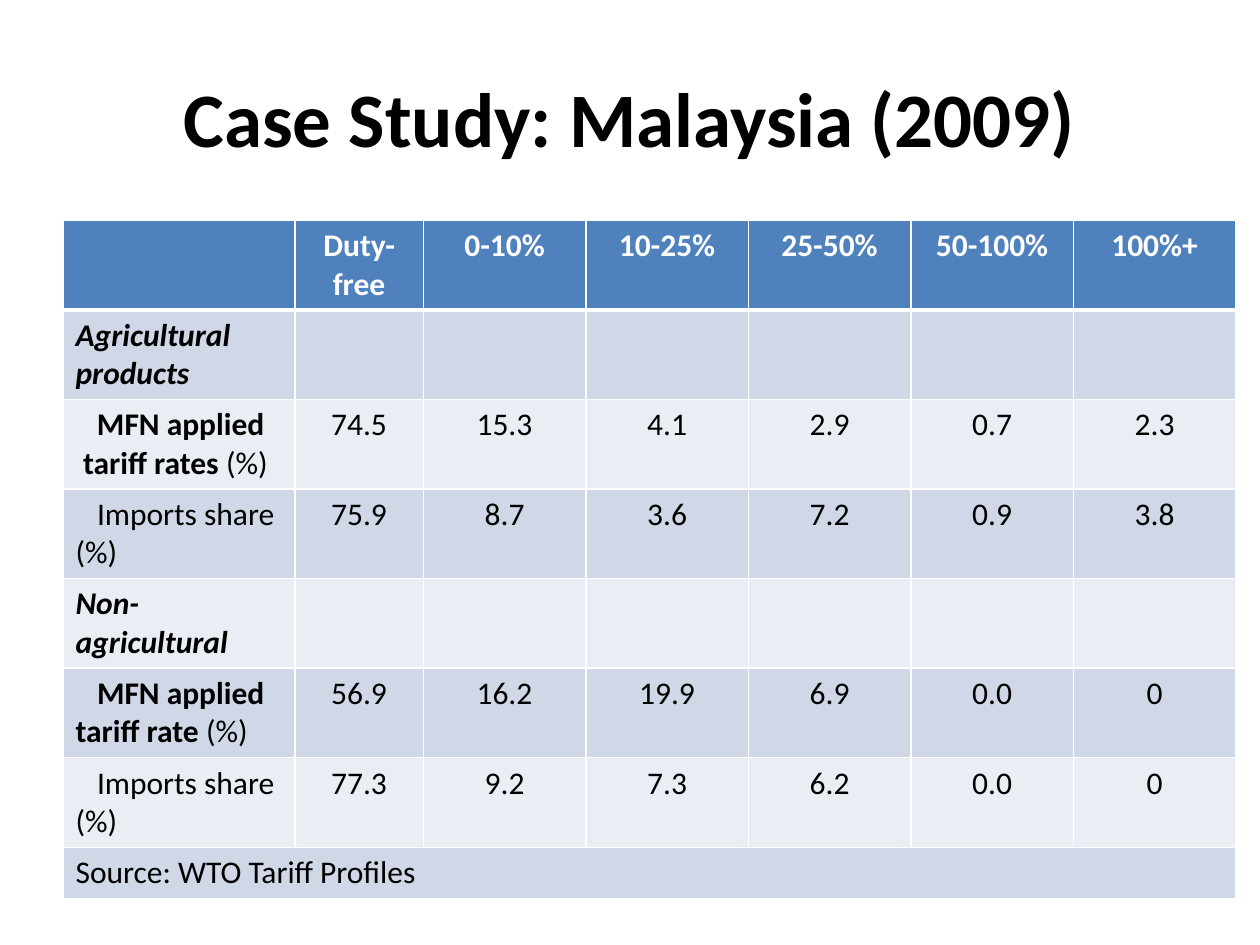
from dataclasses import dataclass

from lxml import etree
from pptx import Presentation, util as u
from pptx.dml.color import RGBColor
from pptx.enum import text
from pptx.oxml.ns import qn

COLORS = {
    "header": "4F81BD",
    "odd": "D0D8E8",
    "even": "E9EDF4",
    "line": "FFFFFF",
    "light": "FFFFFF",
    "dark": "000000",
}
FONT = "Calibri"
UNIT = 0.25  # grid step in inches: 40 columns by 30 rows
FIRST_WIDTH, DUTY_FREE_WIDTH, BAND_WIDTH = 7.36, 4.08, 5.16
ROW_HEIGHT, SOURCE_HEIGHT = 2.8, 1.64
INDENT = 0.68
THIN, THICK = 1, 3


@dataclass
class TariffRow:
    strong: str = ""
    plain: str = ""
    values: tuple[str, ...] = ()
    italic: bool = False
    indent: float = 0  # start of the first line
    margin: float = 0  # start of the following lines


HEADINGS = ("", "Duty-free", "0-10%", "10-25%", "25-50%", "50-100%", "100%+")
ROWS = [
    TariffRow("Agricultural products", italic=True),
    TariffRow("MFN applied tariff rates ", "(%)",
              ("74.5", "15.3", "4.1", "2.9", "0.7", "2.3"), indent=INDENT, margin=0.24),
    TariffRow("", "Imports share (%)",
              ("75.9", "8.7", "3.6", "7.2", "0.9", "3.8"), indent=INDENT),
    TariffRow("Non-agricultural", italic=True),
    TariffRow("MFN applied tariff rate ", "(%)",
              ("56.9", "16.2", "19.9", "6.9", "0.0", "0"), indent=INDENT),
    TariffRow("", "Imports share (%)",
              ("77.3", "9.2", "7.3", "6.2", "0.0", "0"), indent=INDENT),
    TariffRow("", "Source: WTO Tariff Profiles"),
]


def grid(steps: float) -> int:
    return u.Inches(steps * UNIT)


def color(name: str) -> RGBColor:
    return RGBColor.from_string(COLORS[name])


def format_paragraph(paragraph, size: float, color_name: str, bold=None, centred=True) -> None:
    paragraph.alignment = text.PP_ALIGN.CENTER if centred else text.PP_ALIGN.LEFT
    font = paragraph.font
    font.name, font.size, font.bold = FONT, u.Pt(size), bold
    font.color.rgb = color(color_name)


def style_cell(cell, fill: str, top: float = THIN, bottom: float = THIN) -> None:
    properties = cell._tc.get_or_add_tcPr()
    for side, width in (("L", THIN), ("R", THIN), ("T", top), ("B", bottom)):
        line = etree.SubElement(properties, qn(f"a:ln{side}"), w=str(u.Pt(width)))
        solid = etree.SubElement(line, qn("a:solidFill"))
        etree.SubElement(solid, qn("a:srgbClr"), val=COLORS["line"])
    cell.fill.solid()
    cell.fill.fore_color.rgb = color(fill)


def write_value(cell, value: str, color_name: str, bold: bool) -> None:
    if value:
        cell.text = value
        format_paragraph(cell.text_frame.paragraphs[0], 18, color_name, bold)


def write_label(cell, row: TariffRow) -> None:
    paragraph = cell.text_frame.paragraphs[0]
    format_paragraph(paragraph, 18, "dark", centred=False)
    properties = paragraph._p.get_or_add_pPr()
    properties.set("marL", str(grid(row.margin)))
    properties.set("indent", str(grid(row.indent - row.margin)))
    for words, bold in ((row.strong, True), (row.plain, False)):
        if words:
            run = paragraph.add_run()
            run.text = words
            run.font.bold, run.font.italic = bold, row.italic


def add_title(slide, words: str) -> None:
    title = slide.shapes.title
    title.left, title.top, title.width, title.height = map(grid, (2, 1.2, 36, 5))
    title.text = words
    title.text_frame.vertical_anchor = text.MSO_ANCHOR.MIDDLE
    format_paragraph(title.text_frame.paragraphs[0], 44, "dark", True)


def add_tariff_table(slide) -> None:
    widths = [FIRST_WIDTH, DUTY_FREE_WIDTH] + [BAND_WIDTH] * 5
    heights = [ROW_HEIGHT] * len(ROWS) + [SOURCE_HEIGHT]
    table = slide.shapes.add_table(
        len(heights), len(widths), grid(2), grid(7), grid(sum(widths)), grid(sum(heights))
    ).table
    for column, width in zip(table.columns, widths):
        column.width = grid(width)
    for table_row, height in zip(table.rows, heights):
        table_row.height = grid(height)

    # Header row
    for index, heading in enumerate(HEADINGS):
        cell = table.cell(0, index)
        style_cell(cell, "header", bottom=THICK)
        write_value(cell, heading, "light", True)

    # Banded body rows
    for number, row in enumerate(ROWS, start=1):
        for index in range(len(widths)):
            style_cell(table.cell(number, index), "odd" if number % 2 else "even",
                       top=THICK if number == 1 else THIN)
        write_label(table.cell(number, 0), row)
        for index, value in enumerate(row.values, start=1):
            write_value(table.cell(number, index), value, "dark", False)

    # Source row across the whole table
    last = len(ROWS)
    table.cell(last, 0).merge(table.cell(last, len(widths) - 1))


def main() -> None:
    presentation = Presentation()
    presentation.slide_width, presentation.slide_height = grid(40), grid(30)
    slide = presentation.slides.add_slide(presentation.slide_layouts[5])
    add_title(slide, "Case Study: Malaysia (2009)")
    add_tariff_table(slide)
    presentation.save("out.pptx")


if __name__ == "__main__":
    main()
